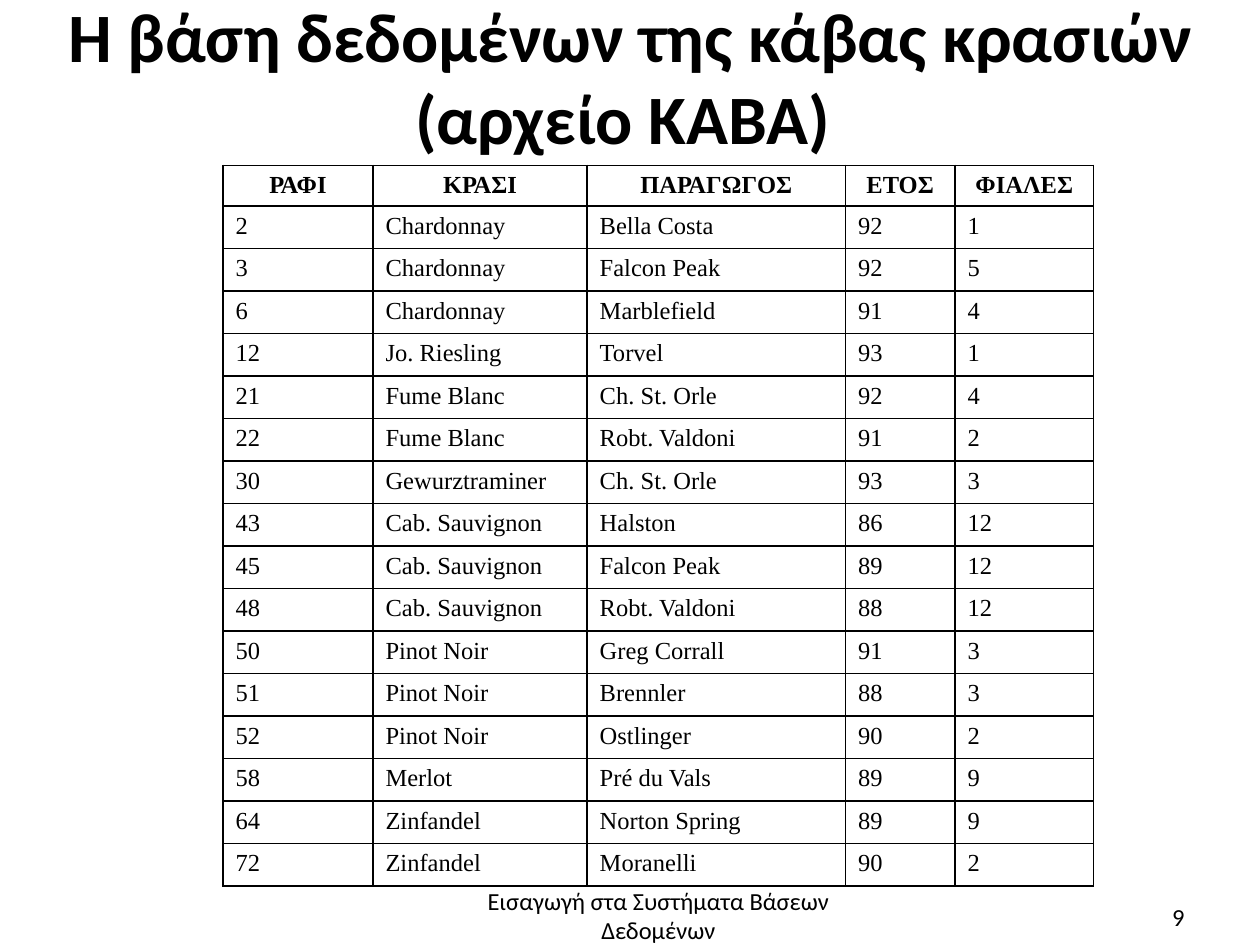
"""Build the wine cellar database slide."""
import pptx
import pptx.dml.color
import pptx.enum.text
import pptx.oxml
import pptx.oxml.ns
import pptx.util

ALIGN = pptx.enum.text.PP_ALIGN
ANCHOR = pptx.enum.text.MSO_ANCHOR
INK = "000000"
HEADINGS = ("ΡΑΦΙ", "ΚΡΑΣΙ", "ΠΑΡΑΓΩΓΟΣ", "ΕΤΟΣ", "ΦΙΑΛΕΣ")
WINES = (
    ("2", "Chardonnay", "Bella Costa", "92", "1"),
    ("3", "Chardonnay", "Falcon Peak", "92", "5"),
    ("6", "Chardonnay", "Marblefield", "91", "4"),
    ("12", "Jo. Riesling", "Torvel", "93", "1"),
    ("21", "Fume Blanc", "Ch. St. Orle", "92", "4"),
    ("22", "Fume Blanc", "Robt. Valdoni", "91", "2"),
    ("30", "Gewurztraminer", "Ch. St. Orle", "93", "3"),
    ("43", "Cab. Sauvignon", "Halston", "86", "12"),
    ("45", "Cab. Sauvignon", "Falcon Peak", "89", "12"),
    ("48", "Cab. Sauvignon", "Robt. Valdoni", "88", "12"),
    ("50", "Pinot Noir", "Greg Corrall", "91", "3"),
    ("51", "Pinot Noir", "Brennler", "88", "3"),
    ("52", "Pinot Noir", "Ostlinger", "90", "2"),
    ("58", "Merlot", "Pré du Vals", "89", "9"),
    ("64", "Zinfandel", "Norton Spring", "89", "9"),
    ("72", "Zinfandel", "Moranelli", "90", "2"),
)


def colour(value):
    return pptx.dml.color.RGBColor.from_string(value)


class SlideBuilder:
    """Holds the style and the current slide."""

    heading_font = "Calibri"
    table_font = "Times New Roman"
    text_size = 14
    title_size = 39.6

    def __init__(self, presentation):
        self.width = presentation.slide_width
        self.height = presentation.slide_height
        self.slide = presentation.slides.add_slide(presentation.slide_layouts[5])

    def area(self, left, top, width, height):
        return (int(left * self.width), int(top * self.height),
                int(width * self.width), int(height * self.height))

    def set_text(self, text_frame, text, font, size, alignment, bold=False):
        text_frame.text = text
        paragraph = text_frame.paragraphs[0]
        paragraph.alignment = alignment
        for run in paragraph.runs:
            run.font.name = font
            run.font.size = pptx.util.Pt(size)
            run.font.bold = bold
            run.font.color.rgb = colour(INK)
        return paragraph

    def title(self, text, *shares):
        shape = self.slide.shapes.title
        shape.left, shape.top, shape.width, shape.height = self.area(*shares)
        frame = shape.text_frame
        frame.auto_size = pptx.enum.text.MSO_AUTO_SIZE.NONE
        frame.vertical_anchor = ANCHOR.MIDDLE
        frame.margin_left = frame.margin_right = frame.margin_bottom = 0
        frame.margin_top = pptx.util.Inches(0.02)
        paragraph = self.set_text(frame, text, self.heading_font,
                                  self.title_size, ALIGN.CENTER, True)
        paragraph.line_spacing = 0.98

    def text(self, text, alignment, *shares):
        frame = self.slide.shapes.add_textbox(*self.area(*shares)).text_frame
        frame.word_wrap = True
        self.set_text(frame, text, self.heading_font, self.text_size, alignment)

    def border(self, cell):
        properties = cell._tc.get_or_add_tcPr()
        for position, side in enumerate(("lnL", "lnR", "lnT", "lnB")):
            line = pptx.oxml.parse_xml(
                f'<a:{side} {pptx.oxml.ns.nsdecls("a")} w="12700"><a:solidFill>'
                f'<a:srgbClr val="{INK}"/></a:solidFill></a:{side}>')
            properties.insert(position, line)

    def table(self, headings, records, columns, header_height, row_height, left, top):
        rows = (headings, *records)
        heights = [header_height] + [row_height] * len(records)
        area = self.area(left, top, sum(columns), sum(heights))
        table = self.slide.shapes.add_table(len(rows), len(columns), *area).table
        for column, share in zip(table.columns, columns):
            column.width = int(share * self.width)
        for row, share, values in zip(table.rows, heights, rows):
            row.height = int(share * self.height)
            is_heading = values is headings
            alignment = ALIGN.CENTER if is_heading else ALIGN.LEFT
            for cell, value in zip(row.cells, values):
                cell.fill.background()
                self.border(cell)
                self.set_text(cell.text_frame, value, self.table_font,
                              self.text_size, alignment, is_heading)


def main():
    presentation = pptx.Presentation()
    presentation.slide_width = pptx.util.Inches(10)
    presentation.slide_height = pptx.util.Inches(7.5)
    builder = SlideBuilder(presentation)
    builder.title("Η βάση δεδομένων της κάβας κρασιών (αρχείο ΚΑΒΑ) ",
                  0.051, 0.001, 0.899, 0.163)
    builder.table(HEADINGS, WINES, (0.119, 0.17, 0.205, 0.087, 0.11),
                  0.043, 0.045, 0.177, 0.175)
    builder.text("Εισαγωγή στα Συστήματα Βάσεων Δεδομένων", ALIGN.CENTER,
                 0.348, 0.931, 0.349, 0.073)
    builder.text("9", ALIGN.RIGHT, 0.717, 0.948, 0.233, 0.053)
    presentation.save("out.pptx")


if __name__ == "__main__":
    main()
